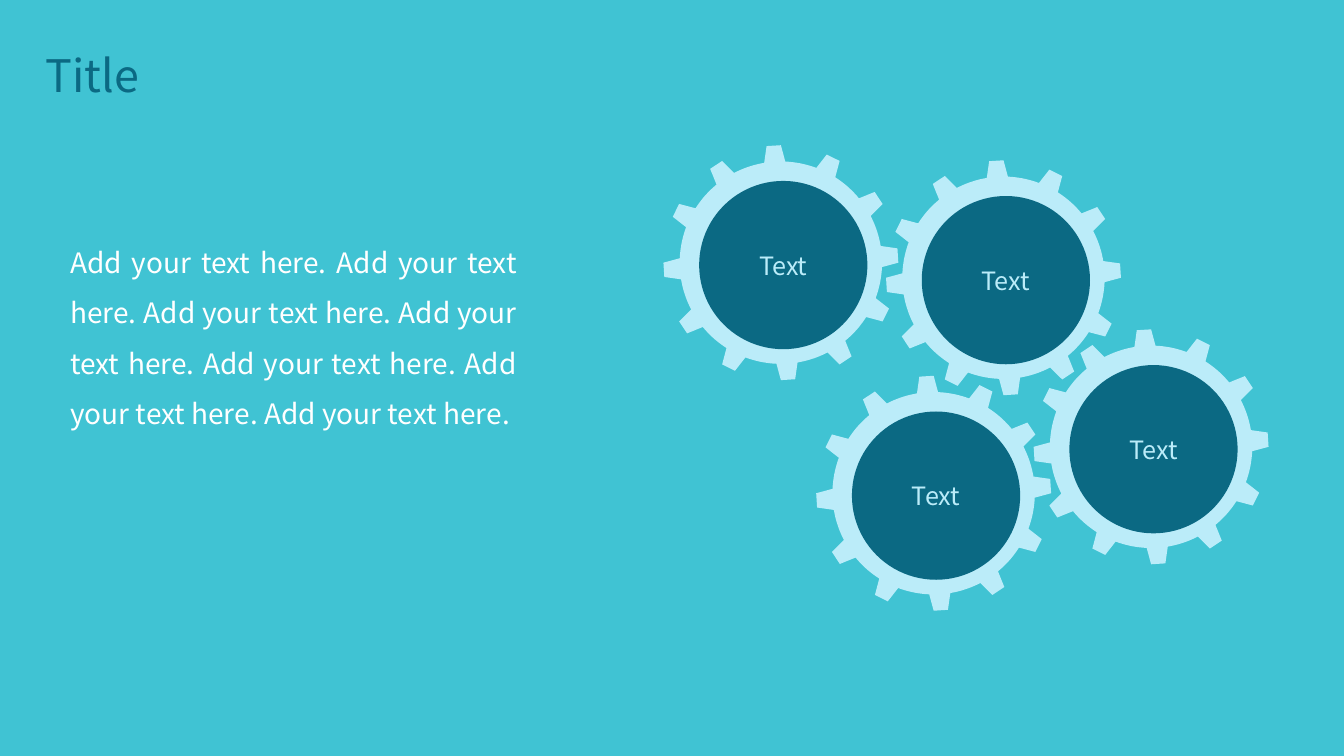
from math import cos, radians, sin

from pptx import Presentation
from pptx.dml.color import RGBColor
from pptx.enum.shapes import MSO_SHAPE as Preset
from pptx.enum.text import MSO_ANCHOR as Anchor, MSO_AUTO_SIZE as AutoSize, PP_ALIGN as Align
from pptx.util import Cm, Pt

TURQUOISE = RGBColor(0x40, 0xC3, 0xD3)
PALE_BLUE = RGBColor(0xBB, 0xEC, 0xF9)
DEEP_TEAL = RGBColor(0x0B, 0x69, 0x83)
WHITE = RGBColor(0xFF, 0xFF, 0xFF)
FONT = "Noto Sans CJK JP"

TEETH = 12
FIRST_TOOTH = -3.5
TIP_RADIUS, ROOT_RADIUS = 2.96, 2.55
HUB_SIZE, HUB_OFFSET = 4.24, 0.06
GEAR_CENTRES = [(25.29, 7), (19.68, 6.62), (23.53, 12.43), (29.01, 11.26)]


def write(frame, text, size, color, align, spacing=1.0):
    paragraph = frame.paragraphs[0]
    paragraph.alignment = align
    paragraph.line_spacing = spacing
    run = paragraph.add_run()
    run.text = text
    run.font.name = FONT
    run.font.size = Pt(size)
    run.font.color.rgb = color


def paint(part, color):
    part.fill.solid()
    part.fill.fore_color.rgb = color
    part.line.fill.background()
    part.shadow.inherit = False


prs = Presentation()
prs.slide_width, prs.slide_height = Cm(33.87), Cm(19.05)
slide = prs.slides.add_slide(prs.slide_layouts[5])
slide.background.fill.solid()
slide.background.fill.fore_color.rgb = TURQUOISE

tooth_profile = [(-3.5, TIP_RADIUS), (3.5, TIP_RADIUS)]
tooth_profile += [(angle, ROOT_RADIUS) for angle in range(6, 25, 2)]

for x, y in GEAR_CENTRES:
    outline = []
    for tooth in range(TEETH):
        for offset, radius in tooth_profile:
            angle = radians(FIRST_TOOTH + tooth * 360 / TEETH + offset)
            outline.append((Cm(x + radius * sin(angle)), Cm(y - radius * cos(angle))))
    gear = slide.shapes.add_group_shape()
    builder = gear.shapes.build_freeform(*outline[0])
    builder.add_line_segments(outline[1:], close=True)
    paint(builder.convert_to_shape(), PALE_BLUE)

    corner = HUB_OFFSET - HUB_SIZE / 2
    hub = gear.shapes.add_shape(
        Preset.OVAL, Cm(x + corner), Cm(y + corner), Cm(HUB_SIZE), Cm(HUB_SIZE))
    paint(hub, DEEP_TEAL)
    hub.text_frame.vertical_anchor = Anchor.MIDDLE
    write(hub.text_frame, "Text", 18, PALE_BLUE, Align.CENTER)

body = slide.shapes.add_textbox(Cm(1.52), Cm(5.64), Cm(11.76), Cm(7.8))
body.text_frame.word_wrap = True
write(body.text_frame, " ".join(["Add your text here."] * 7), 20, WHITE, Align.JUSTIFY, 1.5)

title = slide.shapes.title
title.left, title.top, title.width, title.height = Cm(0.89), Cm(0.46), Cm(18.52), Cm(3)
title.text_frame.auto_size = AutoSize.NONE
title.text_frame.vertical_anchor = Anchor.MIDDLE
write(title.text_frame, "Title", 32, DEEP_TEAL, Align.LEFT, 0.9)

prs.save("out.pptx")
